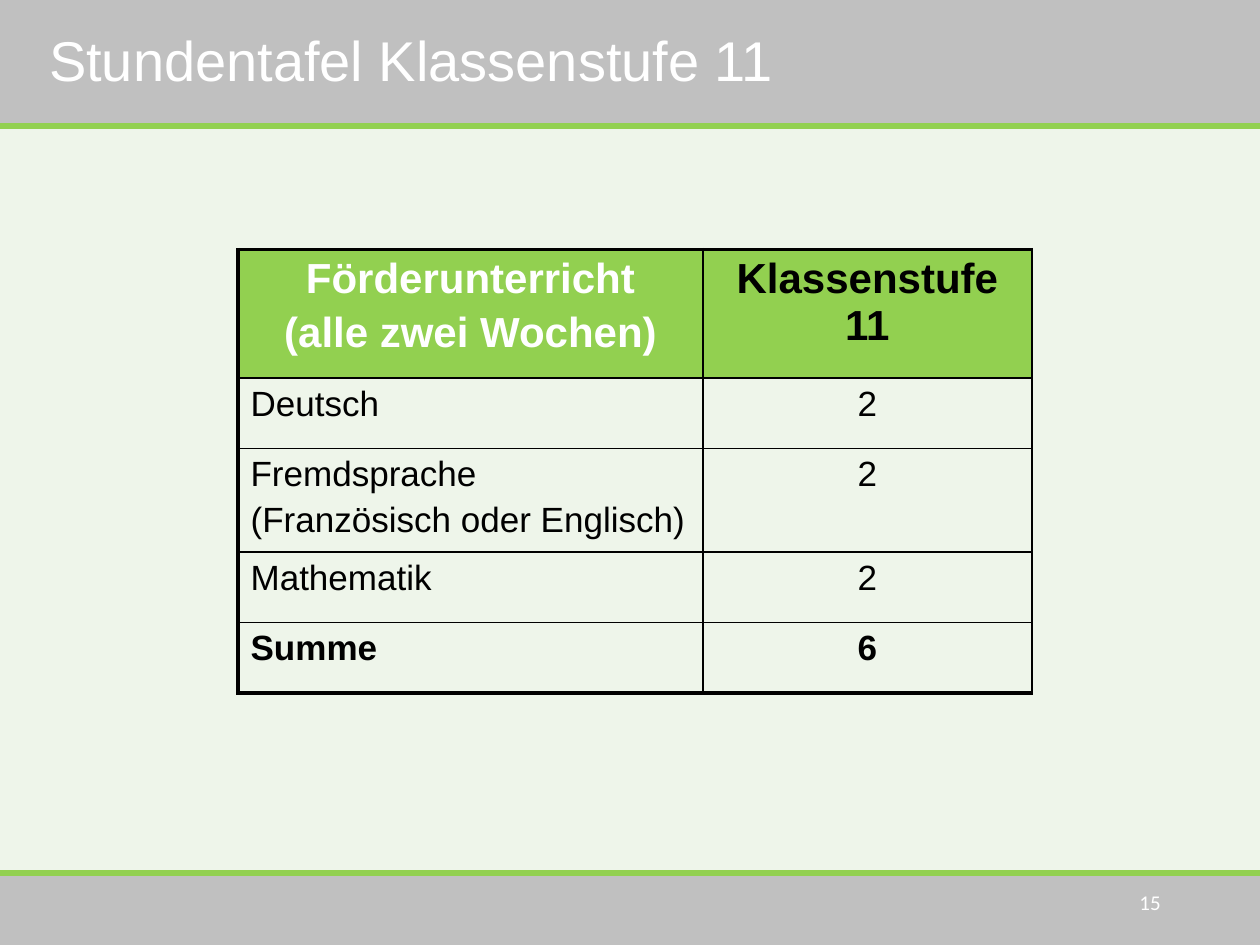
"""Build the timetable slide for remedial lessons in grade 11."""
from dataclasses import dataclass

import lxml.etree
import pptx
import pptx.dml.color
import pptx.enum.shapes
import pptx.enum.text
import pptx.oxml.ns
import pptx.util

Pt = pptx.util.Pt
RGBColor = pptx.dml.color.RGBColor
Align = pptx.enum.text.PP_ALIGN
Anchor = pptx.enum.text.MSO_ANCHOR
qn = pptx.oxml.ns.qn

BLACK = RGBColor(0x00, 0x00, 0x00)
WHITE = RGBColor(0xFF, 0xFF, 0xFF)
GRAY = RGBColor(0xC0, 0xC0, 0xC0)
GREEN = RGBColor(0x92, 0xD0, 0x50)
PALE_GREEN = RGBColor(0xEE, 0xF5, 0xEA)

SLIDE_WIDTH, SLIDE_HEIGHT = 720, 540
THICK, THIN = 2.25, 1


@dataclass(frozen=True)
class Band:
    top: float
    height: float
    rule_y: float


@dataclass(frozen=True)
class Lesson:
    subject: str
    hours: str
    row_height: float
    bold: bool = False
    header: bool = False


BANDS = [Band(0, 72, 72), Band(500.4, 39.6, 499)]
LESSONS = [
    Lesson("Förderunterricht\n(alle zwei Wochen)", "Klassenstufe 11", 73.5, bold=True, header=True),
    Lesson("Deutsch", "2", 40.25),
    Lesson("Fremdsprache\n(Französisch oder Englisch)", "2", 56),
    Lesson("Mathematik", "2", 40.25),
    Lesson("Summe", "6", 40.25, bold=True),
]
COLUMN_WIDTHS = [265.7, 187.9]


def draw_band(slide, band: Band) -> None:
    """Draw a gray bar and the green rule at its edge."""
    bar = slide.shapes.add_shape(
        pptx.enum.shapes.MSO_SHAPE.RECTANGLE, 0, Pt(band.top), Pt(SLIDE_WIDTH), Pt(band.height))
    bar.shadow.inherit = False
    bar.fill.solid()
    bar.fill.fore_color.rgb = GRAY
    bar.line.fill.background()
    rule = slide.shapes.add_connector(
        pptx.enum.shapes.MSO_CONNECTOR.STRAIGHT, 0, Pt(band.rule_y), Pt(SLIDE_WIDTH), Pt(band.rule_y))
    rule.line.color.rgb = GREEN
    rule.line.width = Pt(3.5)
    lxml.etree.SubElement(rule.element.spPr, qn("a:effectLst"))


def style_font(paragraph, name: str, size: float, color: RGBColor, bold: bool = False) -> None:
    """Set the font of a whole paragraph."""
    paragraph.font.name = name
    paragraph.font.size = Pt(size)
    paragraph.font.bold = bold
    paragraph.font.color.rgb = color


def draw_borders(cell, widths: dict[str, float]) -> None:
    """Give each named cell edge a black line ahead of the fill."""
    properties = cell._tc.get_or_add_tcPr()
    for position, (edge, width) in enumerate(widths.items()):
        line = lxml.etree.Element(qn(f"a:{edge}"), w=str(Pt(width)))
        solid = lxml.etree.SubElement(line, qn("a:solidFill"))
        lxml.etree.SubElement(solid, qn("a:srgbClr"), val=str(BLACK))
        properties.insert(position, line)


def fill_cell(cell, text: str, lesson: Lesson, color: RGBColor, centered: bool) -> None:
    """Write and format one table cell."""
    cell.text = text
    if lesson.header:
        cell.fill.solid()
        cell.fill.fore_color.rgb = GREEN
    else:
        cell.fill.background()
    for index, paragraph in enumerate(cell.text_frame.paragraphs):
        paragraph.alignment = Align.CENTER if centered else Align.LEFT
        paragraph.space_before = Pt(4 if index else 0)
        style_font(paragraph, "Arial", 24 if lesson.header else 20, color, lesson.bold)


def draw_timetable(slide, lessons: list[Lesson]) -> None:
    """Draw the lessons as a bordered table."""
    timetable = slide.shapes.add_table(
        len(lessons), len(COLUMN_WIDTHS), Pt(136), Pt(142.6), Pt(sum(COLUMN_WIDTHS)),
        Pt(sum(lesson.row_height for lesson in lessons))).table
    timetable.horz_banding = False
    for column, width in zip(timetable.columns, COLUMN_WIDTHS):
        column.width = Pt(width)
    for row, lesson in enumerate(lessons):
        timetable.rows[row].height = Pt(lesson.row_height)
        subject, hours = timetable.cell(row, 0), timetable.cell(row, 1)
        fill_cell(subject, lesson.subject, lesson, WHITE if lesson.header else BLACK, lesson.header)
        fill_cell(hours, lesson.hours, lesson, BLACK, True)
        for cell, left in ((subject, THICK), (hours, THIN)):
            draw_borders(cell, {
                "lnL": left,
                "lnR": THIN,
                "lnT": THICK if row == 0 else THIN,
                "lnB": THICK if row == len(lessons) - 1 else THIN,
            })


def draw_title(slide, text: str) -> None:
    """Place the title in front of the upper bar."""
    title = slide.shapes.title
    title.element.getparent().append(title.element)
    title.left, title.top, title.width, title.height = Pt(20.9), Pt(0), Pt(481.7), Pt(72)
    title.text_frame.text = text
    title.text_frame.vertical_anchor = Anchor.MIDDLE
    heading = title.text_frame.paragraphs[0]
    heading.alignment = Align.LEFT
    heading.line_spacing = 0.9
    style_font(heading, "Arial", 32, WHITE)


def draw_page_number(slide, number: str) -> None:
    """Write the page number on the lower bar."""
    frame = slide.shapes.add_textbox(Pt(508.3), Pt(501.1), Pt(162), Pt(28.8)).text_frame
    frame.word_wrap = True
    frame.vertical_anchor = Anchor.MIDDLE
    frame.text = number
    frame.paragraphs[0].alignment = Align.RIGHT
    style_font(frame.paragraphs[0], "Calibri", 12, WHITE)


def main() -> None:
    """Build and save the slide."""
    deck = pptx.Presentation()
    deck.slide_width, deck.slide_height = Pt(SLIDE_WIDTH), Pt(SLIDE_HEIGHT)
    slide = deck.slides.add_slide(deck.slide_layouts.get_by_name("Title Only"))
    slide.background.fill.solid()
    slide.background.fill.fore_color.rgb = PALE_GREEN
    for band in BANDS:
        draw_band(slide, band)
    draw_title(slide, "Stundentafel Klassenstufe 11")
    draw_page_number(slide, "15")
    draw_timetable(slide, LESSONS)
    deck.save("out.pptx")


if __name__ == "__main__":
    main()
